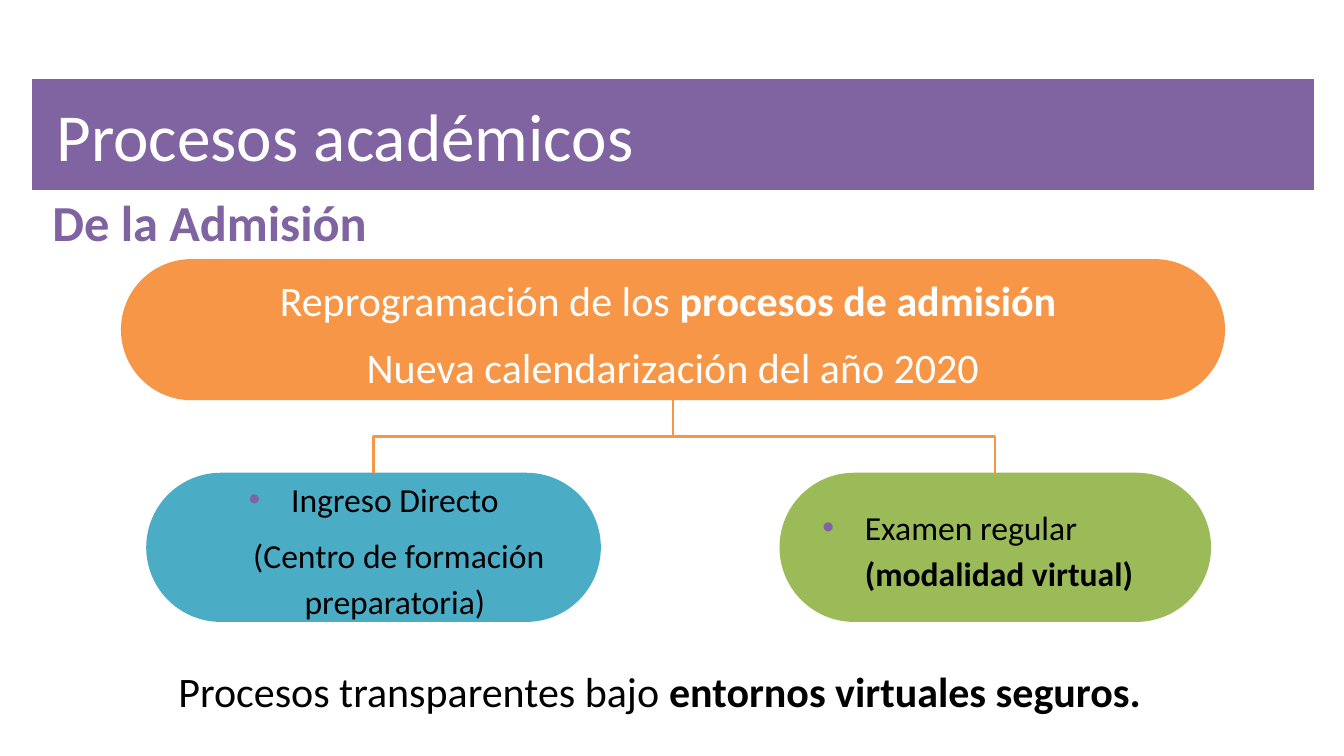
from dataclasses import dataclass

from lxml import etree
from pptx import Presentation
from pptx.dml.color import RGBColor
from pptx.enum.shapes import MSO_CONNECTOR, MSO_SHAPE
from pptx.enum.text import MSO_ANCHOR, PP_ALIGN
from pptx.oxml.ns import qn
from pptx.shapes.autoshape import Shape
from pptx.slide import Slide
from pptx.util import Emu, Inches, Pt

RECT, PILL = MSO_SHAPE.RECTANGLE, MSO_SHAPE.ROUNDED_RECTANGLE
ELBOW = MSO_CONNECTOR.ELBOW
TOP, MIDDLE = MSO_ANCHOR.TOP, MSO_ANCHOR.MIDDLE
LEFT, CENTER = PP_ALIGN.LEFT, PP_ALIGN.CENTER

SLIDE_W, SLIDE_H = Inches(13.33), Inches(7.5)
COLUMNS = ROWS = 100
BULLET_INDENT, BULLET_HANG = Inches(0.5), Inches(-0.42)


@dataclass(frozen=True)
class Theme:
    font: str = "Calibri"
    bullet_font: str = "Arial"
    purple: str = "8064A2"
    orange: str = "F79646"
    green: str = "9BBB59"
    blue: str = "4BACC6"
    white: str = "FFFFFF"
    black: str = "000000"
    title: int = 48
    subtitle: int = 36
    statement: int = 30
    detail: int = 24
    spacing: float = 1.15
    gap: float = 6.7
    connector: float = 1.5
    border: float = 0.75


THEME = Theme()


@dataclass(frozen=True)
class Run:
    text: str
    bold: bool = False


@dataclass(frozen=True)
class Paragraph:
    runs: tuple[Run, ...]
    align: PP_ALIGN = CENTER
    indented: bool = False
    bullet: bool = False
    spacing: float = THEME.spacing


@dataclass(frozen=True)
class Block:
    """Text block; left, top, width and height in grid columns and rows."""
    left: float
    top: float
    width: float
    height: float
    size: int
    color: str
    paragraphs: tuple[Paragraph, ...]
    fill: str | None = None
    border: str | None = None
    preset: MSO_SHAPE = RECT
    anchor: MSO_ANCHOR = MIDDLE
    inset_x: float = 0.13
    inset_y: float = 0.13


def col(count: float) -> Emu:
    return Emu(round(SLIDE_W * count / COLUMNS))


def row(count: float) -> Emu:
    return Emu(round(SLIDE_H * count / ROWS))


def set_indent(paragraph, bullet: bool) -> None:
    props = paragraph._p.get_or_add_pPr()
    props.set("marL", str(BULLET_INDENT))
    props.set("indent", str(BULLET_HANG if bullet else 0))
    if bullet:
        tint = etree.SubElement(props, qn("a:buClr"))
        etree.SubElement(tint, qn("a:srgbClr"), val=THEME.purple)
        etree.SubElement(props, qn("a:buFont"), typeface=THEME.bullet_font)
        etree.SubElement(props, qn("a:buChar"), char="•")


def write_text(shape: Shape, block: Block) -> None:
    frame = shape.text_frame
    frame.word_wrap = True
    frame.vertical_anchor = block.anchor
    frame.margin_left = frame.margin_right = Inches(block.inset_x)
    frame.margin_top = frame.margin_bottom = Inches(block.inset_y)
    for index, content in enumerate(block.paragraphs):
        paragraph = frame.add_paragraph() if index else frame.paragraphs[0]
        if content.indented:
            set_indent(paragraph, content.bullet)
        paragraph.alignment = content.align
        paragraph.line_spacing = content.spacing
        if index:
            paragraph.space_before = Pt(THEME.gap)
        for piece in content.runs:
            run = paragraph.add_run()
            run.text = piece.text
            run.font.name = THEME.font
            run.font.size = Pt(block.size)
            run.font.bold = piece.bold
            run.font.color.rgb = RGBColor.from_string(block.color)


def draw_block(slide: Slide, block: Block) -> Shape:
    bounds = col(block.left), row(block.top), col(block.width), row(block.height)
    if block.fill is None:
        shape = slide.shapes.add_textbox(*bounds)
    else:
        shape = slide.shapes.add_shape(block.preset, *bounds)
        shape.shadow.inherit = False
        shape.fill.solid()
        shape.fill.fore_color.rgb = RGBColor.from_string(block.fill)
        if block.preset == PILL:
            shape.adjustments[0] = 0.5
        if block.border is None:
            shape.line.fill.background()
        else:
            shape.line.color.rgb = RGBColor.from_string(block.border)
            shape.line.width = Pt(THEME.border)
    write_text(shape, block)
    return shape


def draw_branch(slide: Slide, parent: Shape, child: Shape) -> None:
    """Elbow from the parent's bottom to the child's top, turned to run vertically."""
    start_x = parent.left + parent.width // 2
    end_x = child.left + child.width // 2
    start_y, end_y = parent.top + parent.height, child.top
    mid_x, mid_y = (start_x + end_x) // 2, (start_y + end_y) // 2
    half_drop = (end_y - start_y) // 2
    half_span = abs(end_x - start_x) // 2
    side = 1 if end_x > start_x else -1
    branch = slide.shapes.add_connector(
        ELBOW,
        Emu(mid_x + side * half_drop), Emu(mid_y - half_span),
        Emu(mid_x - side * half_drop), Emu(mid_y + half_span))
    properties = branch._element.spPr
    properties.find(qn("a:xfrm")).set("rot", str(270 * 60000))
    branch.line.color.rgb = RGBColor.from_string(THEME.orange)
    branch.line.width = Pt(THEME.connector)
    etree.SubElement(properties, qn("a:effectLst"))


# Content
TITLE = Block(
    2.33, 10.4, 95.5, 14.8, THEME.title, THEME.white,
    (Paragraph((Run("Procesos académicos"),), LEFT, spacing=1.0),),
    fill=THEME.purple, border=THEME.white, inset_x=0.25, inset_y=0.05)
SUBTITLE = Block(
    3.15, 24, 38.11, 8.53, THEME.subtitle, THEME.purple,
    (Paragraph((Run("De la Admisión", True),), LEFT, spacing=1.0),),
    anchor=TOP, inset_x=0.1, inset_y=0.1)
CLOSING = Block(
    5.78, 86.4, 86.65, 8.53, THEME.statement, THEME.black,
    (Paragraph((Run("Procesos transparentes bajo "),
                Run("entornos virtuales seguros.", True))),),
    anchor=TOP, inset_x=0.1, inset_y=0.05)
RESCHEDULING = Block(
    9, 34.27, 82.15, 18.67, THEME.statement, THEME.white,
    (Paragraph((Run("Reprogramación de los "), Run("procesos de admisión ", True))),
     Paragraph((Run("Nueva calendarización del año 2020"),))),
    fill=THEME.orange, preset=PILL)
ADMISSION_ROUTES = (
    Block(
        58, 62.53, 32.11, 19.73, THEME.detail, THEME.black,
        (Paragraph((Run("Examen regular "), Run("(modalidad virtual)", True)),
                   LEFT, indented=True, bullet=True),),
        fill=THEME.green, preset=PILL),
    Block(
        10.88, 62.53, 33.83, 19.73, THEME.detail, THEME.black,
        (Paragraph((Run("Ingreso Directo "),), indented=True, bullet=True),
         Paragraph((Run("(Centro de formación preparatoria) "),), indented=True)),
        fill=THEME.blue, preset=PILL),
)


def main() -> None:
    deck = Presentation()
    deck.slide_width, deck.slide_height = SLIDE_W, SLIDE_H
    slide = deck.slides.add_slide(deck.slide_layouts[6])

    # Headings and closing statement
    for block in (TITLE, CLOSING, SUBTITLE):
        draw_block(slide, block)

    # Admission tree
    rescheduling = draw_block(slide, RESCHEDULING)
    for block in ADMISSION_ROUTES:
        draw_branch(slide, rescheduling, draw_block(slide, block))

    deck.save("out.pptx")


if __name__ == "__main__":
    main()
